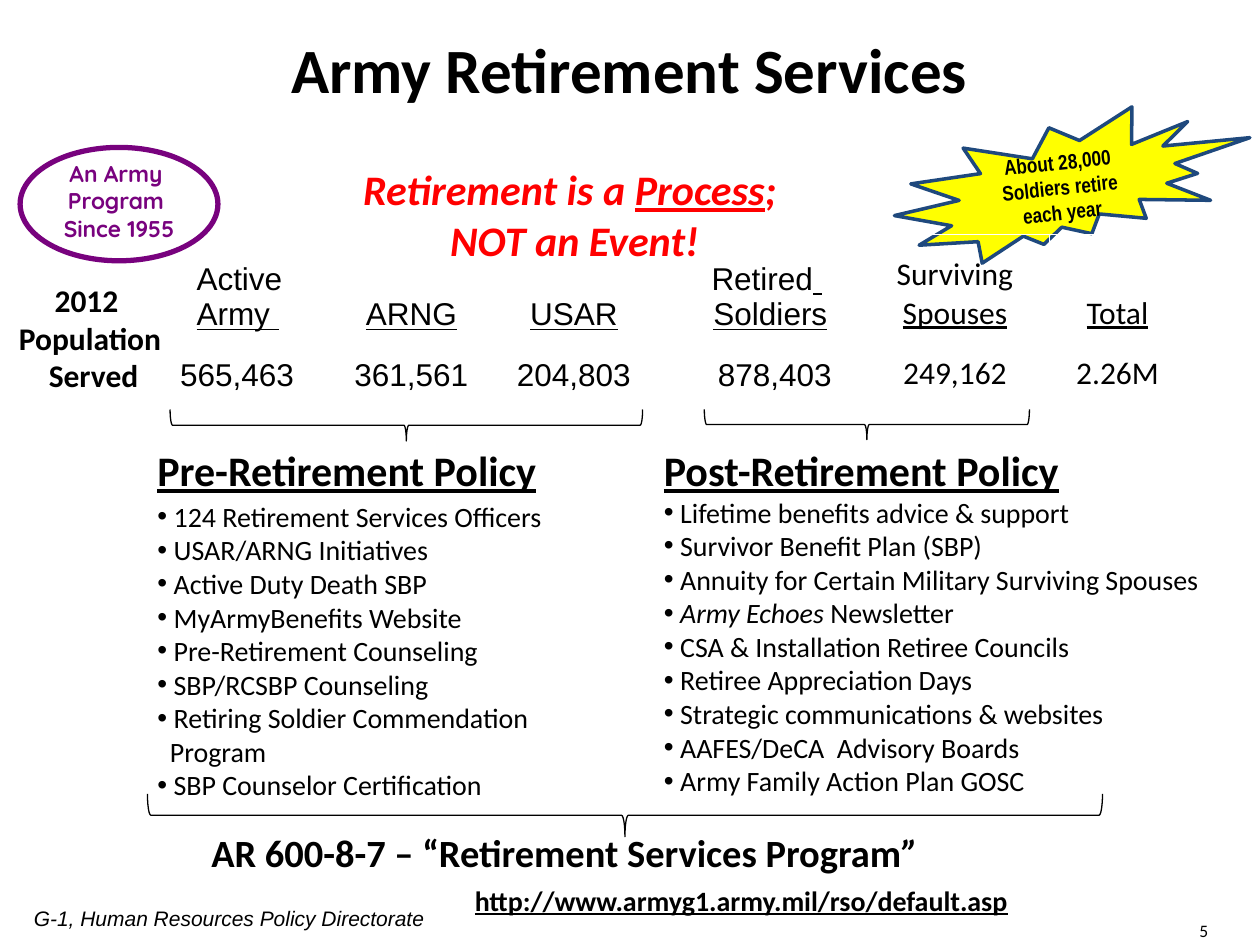
from dataclasses import dataclass, field

from lxml.etree import SubElement
from pptx import Presentation
from pptx.dml.color import RGBColor
from pptx.enum.shapes import MSO_SHAPE
from pptx.enum.text import MSO_ANCHOR, MSO_AUTO_SIZE, PP_ALIGN
from pptx.oxml.ns import qn
from pptx.util import Inches, Pt

COLORS = {"black": "000000", "white": "FFFFFF", "red": "FF0000",
          "yellow": "FFFF00", "navy": "1F497D", "purple": "78027E"}
WIDTH, HEIGHT = Inches(10), Inches(7.5)
CENTER, LEFT = PP_ALIGN.CENTER, PP_ALIGN.LEFT
UNDERLINE = {"underline": True}
PLAIN = {"name": "Calibri", "size": 16}
BOLD = PLAIN | {"bold": True}
HEADING = BOLD | UNDERLINE | {"size": 24}
HANG = 0.13


@dataclass
class Area:
    """Lengths in percent of the slide's width and height."""
    left: float
    top: float
    width: float
    height: float

    def lengths(self) -> tuple[int, int, int, int]:
        return (int(WIDTH * self.left / 100), int(HEIGHT * self.top / 100),
                int(WIDTH * self.width / 100), int(HEIGHT * self.height / 100))


@dataclass
class Run:
    text: str
    format: dict = field(default_factory=dict)


@dataclass
class Line:
    """A paragraph; indent is in inches, before in points."""
    runs: list[Run]
    align: PP_ALIGN = LEFT
    indent: float = 0
    bullet: bool = False
    before: float = 0


@dataclass
class Label:
    area: Area
    lines: list[Line]
    format: dict
    color: str = "black"


def line(text: str, align: PP_ALIGN = LEFT, **options) -> Line:
    return Line([Run(text)], align, **options)


def policy(heading: str, items: list[Line]) -> list[Line]:
    return [Line([Run(heading, HEADING)]), *items]


def bullet(text: str, **options) -> Line:
    return line(text, bullet=True, indent=HANG, **options)


def rgb(color: str) -> RGBColor:
    return RGBColor.from_string(COLORS[color])


def write(frame, lines: list[Line], base: dict, color: str) -> None:
    for index, content in enumerate(lines):
        paragraph = frame.paragraphs[0] if index == 0 else frame.add_paragraph()
        properties = paragraph._p.get_or_add_pPr()
        if content.indent:
            properties.set("marL", str(Inches(content.indent)))
        if content.bullet:
            properties.set("indent", str(-Inches(HANG)))
            SubElement(properties, qn("a:buFont")).set("typeface", "Arial")
            SubElement(properties, qn("a:buChar")).set("char", "•")
        paragraph.alignment = content.align
        if content.before:
            paragraph.space_before = Pt(content.before)
        for part in content.runs:
            run = paragraph.add_run()
            run.text = part.text
            run.font.color.rgb = rgb(color)
            for name, value in (base | part.format).items():
                setattr(run.font, name, Pt(value) if name == "size" else value)


def add_label(shapes, label: Label) -> None:
    frame = shapes.add_textbox(*label.area.lengths()).text_frame
    frame.word_wrap = True
    frame.auto_size = MSO_AUTO_SIZE.SHAPE_TO_FIT_TEXT
    write(frame, label.lines, label.format, label.color)


def add_outlined(shapes, kind: MSO_SHAPE, lengths: tuple, fill: str | None,
                 outline: str, weight: float):
    shape = shapes.add_shape(kind, *lengths)
    shape.shadow.inherit = False
    if fill:
        shape.fill.solid()
        shape.fill.fore_color.rgb = rgb(fill)
    else:
        shape.fill.background()
    shape.line.color.rgb = rgb(outline)
    shape.line.width = Pt(weight)
    return shape


def add_brace(shapes, area: Area) -> None:
    """Draw a brace that fills the area and points down."""
    left, top, width, height = area.lengths()
    shift = (width - height) // 2
    brace = add_outlined(shapes, MSO_SHAPE.LEFT_BRACE,
                         (left + shift, top - shift, height, width),
                         "white", "black", 0.75)
    brace.rotation = 270
    brace.adjustments[0] = 0.08


def add_population_table(shapes) -> None:
    widths, heights = [1.29, 1.29, 1.29, 1.63, 1.5, 1.08], [0.83, 0.48]
    left, top, width, height = Area(13.3, 24.8, 80.8, 17.47).lengths()
    table = shapes.add_table(2, 6, left, top, width, height).table
    table.first_row = table.horz_banding = False
    for column, size in zip(table.columns, widths):
        column.width = Inches(size)
    for row, size in zip(table.rows, heights):
        row.height = Inches(size)
    for row, contents in zip(table.rows, POPULATION):
        for index, (cell, lines) in enumerate(zip(row.cells, contents)):
            cell.fill.background()
            cell.vertical_anchor = MSO_ANCHOR.BOTTOM
            font = "Arial" if index < 4 else "Calibri"
            write(cell.text_frame, lines, {"name": font, "size": 18}, "black")


def underlined(text: str, align: PP_ALIGN = CENTER, indent: float = 0) -> Line:
    return Line([Run(text, UNDERLINE)], align, indent)


POPULATION = [
    [[line("Active", indent=0.13), underlined("Army ", LEFT, 0.13)],
     [underlined("ARNG")],
     [underlined("USAR")],
     [Line([Run("Retired"), Run(" ", UNDERLINE)], CENTER, 0.14),
      underlined("Soldiers", indent=0.2)],
     [Line([Run("Surviving "), Run("Spouses", UNDERLINE)], CENTER)],
     [underlined("Total")]],
    [[line("565,463")], [line("361,561", CENTER)], [line("204,803", CENTER)],
     [line("878,403", CENTER, indent=0.27)], [line("249,162", CENTER)],
     [line("2.26M", CENTER)]],
]
PRE_RETIREMENT = policy("Pre-Retirement Policy", [
    bullet("124 Retirement Services Officers", before=2.4),
    *map(bullet, ["USAR/ARNG Initiatives", "Active Duty Death SBP",
                  "MyArmyBenefits Website", "Pre-Retirement Counseling",
                  "SBP/RCSBP Counseling", "Retiring Soldier Commendation"]),
    line("Program", indent=0.1),
    bullet("SBP Counselor Certification")])
POST_RETIREMENT = policy("Post-Retirement Policy", [
    *map(bullet, ["Lifetime benefits advice & support", "Survivor Benefit Plan (SBP)",
                  "Annuity for Certain Military Surviving Spouses"]),
    Line([Run("Army Echoes ", {"italic": True}), Run("Newsletter")],
         indent=HANG, bullet=True),
    *map(bullet, ["CSA & Installation Retiree Councils", "Retiree Appreciation Days",
                  "Strategic communications & websites",
                  "AAFES/DeCA  Advisory Boards", "Army Family Action Plan GOSC"])])
LABELS = [
    Label(Area(1.7, 95.2, 35, 4), [line("G-1, Human Resources Policy Directorate")],
          {"name": "Arial", "size": 12, "italic": True}),
    Label(Area(94.2, 96.67, 5.8, 3.3), [line("5")], PLAIN | {"size": 10}),
    Label(Area(15.7, 2.53, 68.5, 9.47), [line("Army Retirement Services", CENTER)],
          BOLD | {"size": 36}),
    Label(Area(11.5, 46.4, 45.2, 39.47), PRE_RETIREMENT, PLAIN),
    Label(Area(51.7, 46.4, 48.3, 39.07), POST_RETIREMENT, PLAIN),
    Label(Area(15.8, 87.07, 67.7, 6.27),
          [Line([Run("AR 600-8-7 – “Retirement Services Program"),
                 Run("”", {"italic": True})])], BOLD | {"size": 22}),
    Label(Area(0, 29.07, 14.3, 13.47),
          [line(text, CENTER) for text in ("2012 ", "Population", " Served")],
          BOLD | {"size": 18}),
    Label(Area(36.7, 92.8, 55.8, 4.93),
          [line("http://www.armyg1.army.mil/rso/default.asp")], BOLD | UNDERLINE),
    Label(Area(20.6, 16.67, 50, 12.13),
          [Line([Run("Retirement is a "), Run("Process", UNDERLINE), Run("; ")], CENTER),
           line("NOT an Event!", CENTER)],
          BOLD | {"size": 24, "italic": True}, "red"),
]
SINCE = Label(Area(0, 16.27, 18.9, 10.13),
              [line(text, CENTER) for text in ("An Army ", "Program ", "Since 1955")],
              {"name": "Quicksand", "size": 13, "bold": True}, "purple")
BRACES = [Area(11.7, 84, 75.8, 4.53), Area(13.5, 43.33, 37.5, 3.33),
          Area(55.9, 43.33, 25.8, 3.2)]


def main() -> None:
    presentation = Presentation()
    presentation.slide_width, presentation.slide_height = WIDTH, HEIGHT
    shapes = presentation.slides.add_slide(presentation.slide_layouts[6]).shapes
    for area in BRACES:
        add_brace(shapes, area)
    burst = add_outlined(shapes, MSO_SHAPE.EXPLOSION2,
                         Area(70.8, 12, 28.7, 14.8).lengths(), "yellow", "navy", 2)
    burst.rotation = 354
    burst.text_frame.word_wrap = True
    burst.text_frame.vertical_anchor = MSO_ANCHOR.MIDDLE
    write(burst.text_frame, [line("About 28,000 Soldiers retire each year", CENTER)],
          {"name": "Arial Narrow", "size": 12, "bold": True}, "black")
    add_population_table(shapes)
    for label in LABELS:
        add_label(shapes, label)
    badge = shapes.add_group_shape().shapes
    add_label(badge, SINCE)
    add_outlined(badge, MSO_SHAPE.OVAL, Area(1.6, 15.6, 15.7, 12).lengths(),
                 None, "purple", 3)
    presentation.save("out.pptx")


if __name__ == "__main__":
    main()
